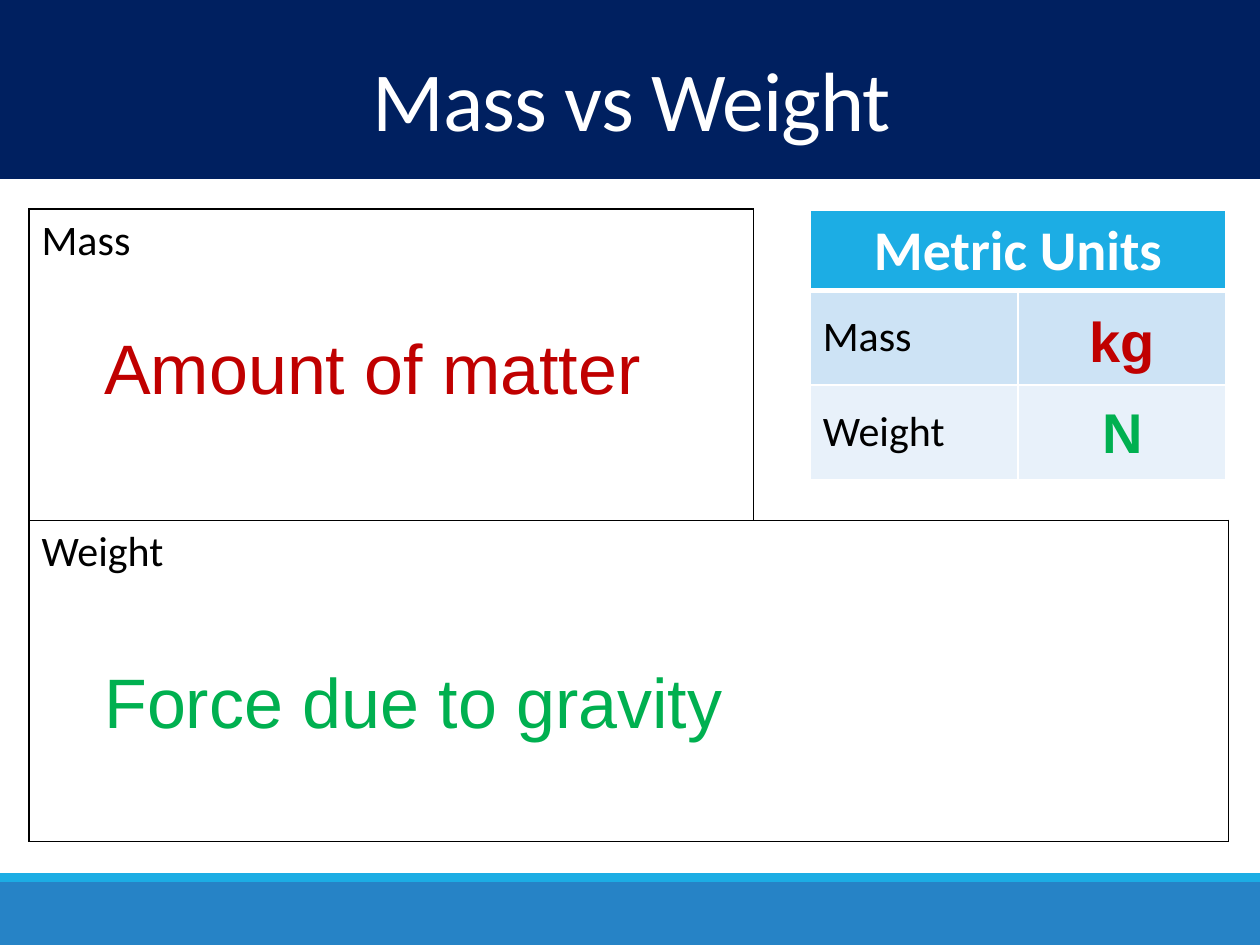
from lxml.etree import SubElement
from pptx import Presentation
from pptx.dml.color import RGBColor
from pptx.enum.shapes import MSO_SHAPE as Shape
from pptx.enum.text import MSO_ANCHOR as Anchor, MSO_AUTO_SIZE as AutoSize, PP_ALIGN as Align
from pptx.oxml.ns import qn
from pptx.util import Inches, Pt

BLACK = RGBColor(0x00, 0x00, 0x00)
WHITE = RGBColor(0xFF, 0xFF, 0xFF)
NAVY = RGBColor(0x00, 0x20, 0x60)
BLUE = RGBColor(0x26, 0x83, 0xC6)
SKY = RGBColor(0x1C, 0xAD, 0xE4)
PALE = RGBColor(0xCD, 0xE3, 0xF5)
PALER = RGBColor(0xE8, 0xF1, 0xFA)
RED = RGBColor(0xC0, 0x00, 0x00)
GREEN = RGBColor(0x00, 0xB0, 0x50)

LABEL = {"name": "Calibri", "size": Pt(24), "bold": False}
HEADING = {"name": "Calibri", "size": Pt(32), "bold": True}
TITLE = {"name": "Calibri", "size": Pt(48)}
DEFINITION = {"name": "Arial", "size": Pt(40)}
UNIT = {"name": "Arial", "size": Pt(32), "bold": True}


def write(frame, wording, style, color, align=Align.LEFT):
    paragraph = frame.paragraphs[0]
    paragraph.alignment = align
    run = paragraph.add_run()
    run.text = wording
    for attribute, value in style.items():
        setattr(run.font, attribute, value)
    run.font.color.rgb = color
    return paragraph


def add_band(slide, top, height, color):
    band = slide.shapes.add_shape(Shape.RECTANGLE, 0, Inches(top), Inches(10), Inches(height))
    band.shadow.inherit = False
    band.fill.solid()
    band.fill.fore_color.rgb = color
    band.line.fill.background()


def add_title(slide, wording):
    title = slide.shapes.add_textbox(Inches(0.03), Inches(0.42), Inches(9.97), Inches(0.84))
    frame = title.text_frame
    frame.word_wrap = True
    frame.vertical_anchor = Anchor.MIDDLE
    paragraph = write(frame, wording, TITLE, WHITE, Align.CENTER)
    paragraph.line_spacing = 0.85
    paragraph.runs[0]._r.get_or_add_rPr().set("spc", "-50")


def add_answer(slide, wording, box, style, color, align=Align.LEFT):
    answer = slide.shapes.add_textbox(*map(Inches, box))
    frame = answer.text_frame
    frame.word_wrap = False
    frame.auto_size = AutoSize.SHAPE_TO_FIT_TEXT
    write(frame, wording, style, color, align)


def add_grid(slide, box, widths, heights):
    grid = slide.shapes.add_table(len(heights), len(widths), *map(Inches, box)).table
    grid.first_row = grid.horz_banding = False
    for column, width in zip(grid.columns, widths):
        column.width = Inches(width)
    for row, height in zip(grid.rows, heights):
        row.height = Inches(height)
    return grid


def format_cell(cell, color, border_color, border_widths):
    properties = cell._tc.get_or_add_tcPr()
    for side in "LRTB":
        if side in border_widths:
            border = SubElement(properties, qn(f"a:ln{side}"), w=str(Pt(border_widths[side])))
            fill = SubElement(border, qn("a:solidFill"))
            SubElement(fill, qn("a:srgbClr"), val=str(border_color))
    if color is None:
        cell.fill.background()
    else:
        cell.fill.solid()
        cell.fill.fore_color.rgb = color


def add_definitions(slide):
    grid = add_grid(slide, (0.23, 1.66, 9.52, 5.01), (5.75, 3.77), (2.47, 2.55))
    grid.cell(1, 0).merge(grid.cell(1, 1))
    for cell in grid.iter_cells():
        beside_mass = cell == grid.cell(0, 1)
        format_cell(cell, None, BLACK, dict.fromkeys("LB" if beside_mass else "LRTB", 1))
    for row, label in enumerate(("Mass", "Weight")):
        write(grid.cell(row, 0).text_frame, label, LABEL, BLACK)
    add_answer(slide, "Amount of matter", (0.73, 2.53, 4.67, 0.77), DEFINITION, RED)
    add_answer(slide, "Force due to gravity", (0.73, 5.18, 5.21, 0.77), DEFINITION, GREEN)


def add_units(slide):
    grid = add_grid(slide, (6.43, 1.67, 3.3, 2.12), (1.65, 1.65), (0.6, 0.75, 0.75))
    grid.cell(0, 0).merge(grid.cell(0, 1))
    rows = (
        ("Metric Units", HEADING, WHITE, Align.CENTER, SKY, {"T": 1, "B": 3}),
        ("Mass", LABEL, BLACK, Align.LEFT, PALE, {"T": 3, "B": 1}),
        ("Weight", LABEL, BLACK, Align.LEFT, PALER, {"T": 1, "B": 1}),
    )
    for index, (label, style, ink, align, fill, edges) in enumerate(rows):
        for column in range(2):
            format_cell(grid.cell(index, column), fill, WHITE, {"L": 1, "R": 1, **edges})
        heading = grid.cell(index, 0)
        heading.vertical_anchor = Anchor.MIDDLE
        write(heading.text_frame, label, style, ink, align)
    add_answer(slide, "kg", (8.54, 2.38, 0.73, 0.64), UNIT, RED, Align.CENTER)
    add_answer(slide, "N", (8.63, 3.11, 0.56, 0.64), UNIT, GREEN, Align.CENTER)


def main():
    deck = Presentation()
    deck.slide_width, deck.slide_height = Inches(10), Inches(7.5)
    slide = deck.slides.add_slide(deck.slide_layouts[6])
    for top, height, color in ((7, 0.5, BLUE), (6.93, 0.07, SKY), (0, 1.42, NAVY)):
        add_band(slide, top, height, color)
    add_title(slide, "Mass vs Weight")
    add_definitions(slide)
    add_units(slide)
    deck.save("out.pptx")


if __name__ == "__main__":
    main()
